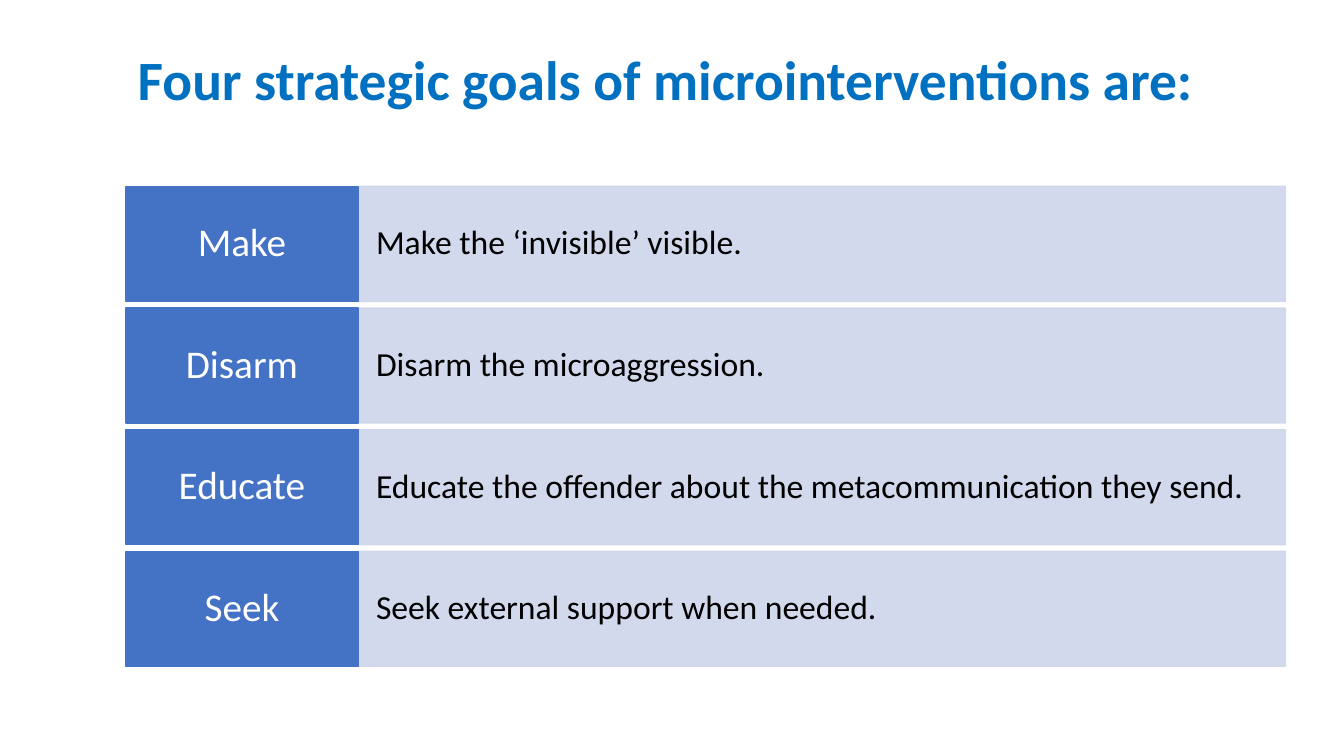
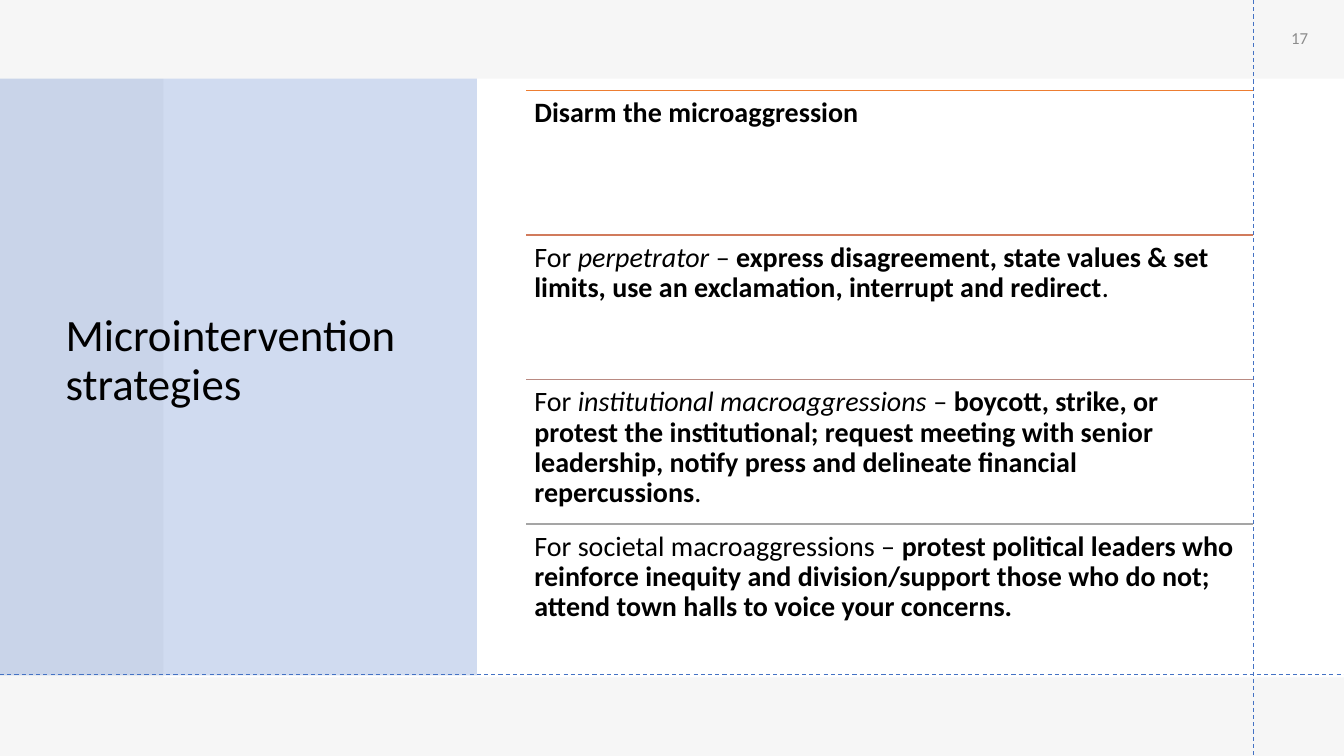
from dataclasses import dataclass
from typing import NamedTuple

from lxml.etree import SubElement
from pptx import Presentation
from pptx.dml.color import RGBColor
from pptx.enum.dml import MSO_LINE_DASH_STYLE as Dash
from pptx.enum.shapes import MSO_CONNECTOR, MSO_SHAPE
from pptx.enum.text import MSO_ANCHOR as Anchor
from pptx.enum.text import MSO_AUTO_SIZE as AutoSize
from pptx.enum.text import PP_ALIGN as Align
from pptx.oxml.ns import qn
from pptx.util import Inches, Pt


# Theme shared by all slides
@dataclass(frozen=True)
class Theme:
    font: str = "Calibri"
    black: str = "000000"
    white: str = "FFFFFF"
    grey: str = "8C8C8C"
    backdrop: str = "F6F6F6"
    heading: str = "0070C0"
    accent: str = "4472C4"
    pale: str = "CFD5EA"
    heading_size: float = 39.6
    side_title_size: float = 32
    label_size: float = 28
    goal_size: float = 24
    strategy_size: float = 20
    number_size: float = 12
    line_spacing: float = 0.9


THEME = Theme()
WIDTH, HEIGHT = 13.33, 7.5


class Area(NamedTuple):
    left: float
    top: float
    width: float
    height: float


class Span(NamedTuple):
    text: str
    bold: bool = False
    italic: bool = False


@dataclass(frozen=True)
class TextStyle:
    size: float
    color: str = THEME.black
    bold: bool = False
    align: Align = Align.LEFT
    anchor: Anchor = Anchor.MIDDLE
    insets: tuple[float, float, float, float] = (0.1, 0.05, 0.1, 0.05)


@dataclass(frozen=True)
class Goal:
    label: str
    description: str


@dataclass(frozen=True)
class Strategy:
    rule_color: str
    spans: tuple[Span, ...]


HEADING = TextStyle(THEME.heading_size, THEME.heading, True, Align.CENTER,
                    Anchor.TOP, (0.1, 0.12, 0.24, 0.05))
SIDE_TITLE = TextStyle(THEME.side_title_size)
LABEL = TextStyle(THEME.label_size, THEME.white, align=Align.CENTER,
                  insets=(0.12, 0.11, 0.12, 0.11))
DESCRIPTION = TextStyle(THEME.goal_size, insets=(0.18, 0.29, 0.18, 0.29))
STRATEGY = TextStyle(THEME.strategy_size, anchor=Anchor.TOP,
                     insets=(0.08, 0.08, 0.08, 0.08))
PAGE_NUMBER = TextStyle(THEME.number_size, THEME.grey, align=Align.CENTER)

GOALS = (
    Goal("Make", "Make the ‘invisible’ visible."),
    Goal("Disarm", "Disarm the microaggression."),
    Goal("Educate", "Educate the offender about the metacommunication they send."),
    Goal("Seek", "Seek external support when needed."),
)

STRATEGIES = (
    Strategy("ED7D31", (Span("Disarm the microaggression", bold=True),)),
    Strategy("D17B5C", (
        Span("For "),
        Span("perpetrator", italic=True),
        Span(" – "),
        Span("express disagreement, state values & set limits, "
             "use an exclamation, interrupt and redirect", bold=True),
        Span("."),
    )),
    Strategy("B98A82", (
        Span("For "),
        Span("institutional macroaggressions ", italic=True),
        Span("– "),
        Span("boycott, strike, or protest the institutional; request meeting "
             "with senior leadership, notify press and delineate financial "
             "repercussions", bold=True),
        Span("."),
    )),
    Strategy("A5A5A5", (
        Span("For societal macroaggressions – "),
        Span("protest political leaders who reinforce inequity and "
             "division/support those who do not; attend town halls to voice "
             "your concerns.", bold=True),
    )),
)


# Drawing helpers
def rgb(color: str) -> RGBColor:
    return RGBColor.from_string(color)


def write_text(shape, content: str | tuple[Span, ...], style: TextStyle) -> None:
    frame = shape.text_frame
    frame.word_wrap = True
    frame.auto_size = AutoSize.NONE
    frame.vertical_anchor = style.anchor
    (frame.margin_left, frame.margin_top,
     frame.margin_right, frame.margin_bottom) = map(Inches, style.insets)
    para = frame.paragraphs[0]
    para.alignment = style.align
    para.line_spacing = THEME.line_spacing
    font = para.font
    font.name, font.size, font.bold = THEME.font, Pt(style.size), style.bold
    font.color.rgb = rgb(style.color)
    if isinstance(content, str):
        para.add_run().text = content
        return
    for span in content:
        run = para.add_run()
        run.text = span.text
        run.font.bold, run.font.italic = span.bold, span.italic


def add_title(page, content: str, area: Area, style: TextStyle) -> None:
    title = page.shapes.title
    title.left, title.top, title.width, title.height = map(Inches, area)
    write_text(title, content, style)
    # Bring the title in front of what is already drawn
    title.element.getparent().append(title.element)


def add_panel(page, area: Area, color: str, opacity: int = 100,
              outlined: bool = False):
    panel = page.shapes.add_shape(MSO_SHAPE.RECTANGLE, *map(Inches, area))
    panel.shadow.inherit = False
    panel.fill.solid()
    panel.fill.fore_color.rgb = rgb(color)
    if outlined:
        panel.line.color.rgb = rgb(color)
        panel.line.width = Pt(1)
    else:
        panel.line.fill.background()
    if opacity < 100:
        for tint in panel.element.spPr.iter(qn("a:srgbClr")):
            SubElement(tint, qn("a:alpha")).set("val", str(opacity * 1000))
    return panel


def add_text(page, area: Area, content: str | tuple[Span, ...],
             style: TextStyle) -> None:
    box = page.shapes.add_textbox(*map(Inches, area))
    write_text(box, content, style)


def add_line(page, start: tuple[float, float], end: tuple[float, float],
             color: str, weight: float, dash: Dash | None = None) -> None:
    line = page.shapes.add_connector(
        MSO_CONNECTOR.STRAIGHT, *map(Inches, start + end))
    line.line.color.rgb = rgb(color)
    line.line.width = Pt(weight)
    if dash is not None:
        line.line.dash_style = dash
    SubElement(line.element.spPr, qn("a:effectLst"))


# Slides
def build_goals(page) -> None:
    add_title(page, "Four strategic goals of microinterventions are:",
              Area(0.92, 0.4, 11.5, 1.45), HEADING)
    left, top, bottom, row_height = 1.25, 1.85, 6.61, 1.14
    label_width, description_width = 2.3, 9.2
    pitch = (bottom - top - row_height) / (len(GOALS) - 1)
    for index, goal in enumerate(GOALS):
        row_top = top + index * pitch
        description = add_panel(
            page, Area(left + label_width, row_top, description_width, row_height),
            THEME.pale, opacity=90, outlined=True)
        write_text(description, goal.description, DESCRIPTION)
        label = add_panel(page, Area(left, row_top, label_width, row_height),
                          THEME.accent, outlined=True)
        write_text(label, goal.label, LABEL)


def build_strategies(page) -> None:
    # Backdrop and side panel
    page.background.fill.solid()
    page.background.fill.fore_color.rgb = rgb(THEME.backdrop)
    add_panel(page, Area(1.62, 0.78, 11.71, 5.94), THEME.white)
    add_panel(page, Area(0, 0.78, 4.73, 5.92), THEME.accent, opacity=25)
    add_title(page, "Microintervention strategies",
              Area(0.55, 0.74, 3.95, 5.69), SIDE_TITLE)

    # Dashed guides and page number
    left, right, top, bottom = 5.22, 12.43, 0.9, 6.63
    guide_y = 6.69
    add_line(page, (right, 0), (right, HEIGHT), THEME.accent, 0.75, Dash.DASH)
    add_line(page, (0, guide_y), (WIDTH, guide_y), THEME.accent, 0.75, Dash.DASH)
    add_text(page, Area(12.45, 0, 0.88, 0.77), "17", PAGE_NUMBER)

    # Ruled list
    row_height = (bottom - top) / len(STRATEGIES)
    for index, strategy in enumerate(STRATEGIES):
        row_top = top + index * row_height
        add_line(page, (left, row_top), (right, row_top), strategy.rule_color, 1)
        add_text(page, Area(left, row_top, right - left, row_height),
                 strategy.spans, STRATEGY)


def main() -> None:
    deck = Presentation()
    deck.slide_width, deck.slide_height = Inches(WIDTH), Inches(HEIGHT)
    title_only = deck.slide_layouts.get_by_name("Title Only")
    for build in (build_goals, build_strategies):
        build(deck.slides.add_slide(title_only))
    deck.save("out.pptx")


if __name__ == "__main__":
    main()
